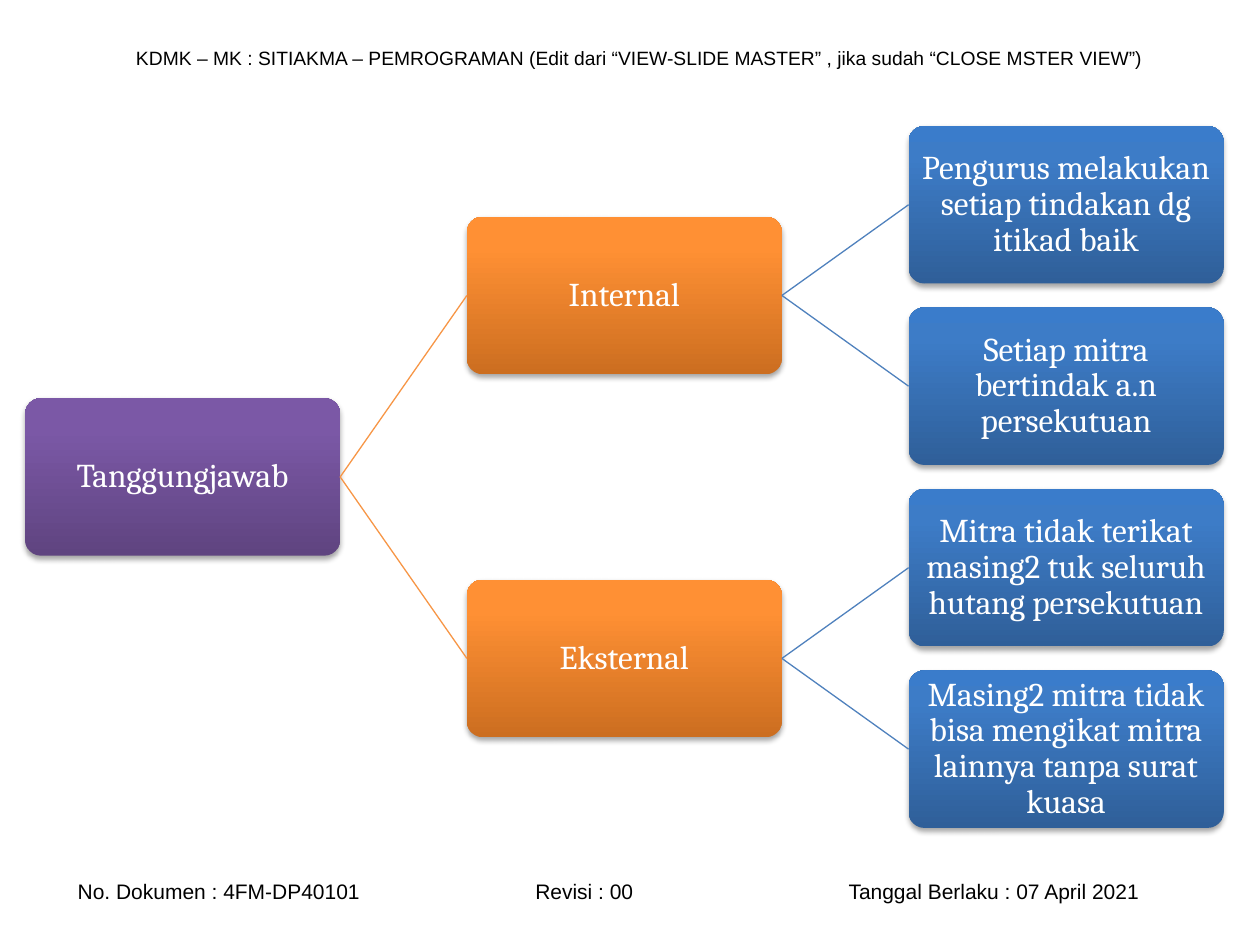
from lxml import etree
from pptx import Presentation
from pptx import oxml
from pptx.dml.color import RGBColor
from pptx.enum import shapes, text
from pptx.oxml import ns
from pptx.util import Pt

BOX_WIDTH, BOX_HEIGHT = 180, 90
COLUMN_PITCH, ROW_PITCH = 252.4, 103.7
LEVELS = [
    {"stops": ["5F4480", "7B58A6", "7C57A8"], "line": None},
    {"stops": ["CC6E20", "FF9034", "FF9136"], "line": "F79646"},
    {"stops": ["2F5F99", "3D7CC7", "3A7CCB"], "line": "4F81BD"},
]
TREE = ("Tanggungjawab", [
    ("Internal", [
        ("Pengurus melakukan setiap tindakan dg itikad baik", []),
        ("Setiap mitra bertindak a.n persekutuan", []),
    ]),
    ("Eksternal", [
        ("Mitra tidak terikat masing2 tuk seluruh hutang persekutuan", []),
        ("Masing2 mitra tidak bisa mengikat mitra lainnya tanpa surat kuasa", []),
    ]),
])


def color(value):
    """Turn a hex string into a colour."""
    return RGBColor.from_string(value)


def apply(target, values):
    """Set each attribute named in a dict."""
    for name, value in values.items():
        setattr(target, name, value)


def write(shape, words, size, font, ink, frame_values, para_values):
    """Write one formatted paragraph into a shape."""
    frame = shape.text_frame
    apply(frame, {"word_wrap": True, "vertical_anchor": text.MSO_ANCHOR.MIDDLE, **frame_values})
    para = frame.paragraphs[0]
    apply(para, para_values)
    span = para.add_run()
    span.text = words
    apply(span.font, {"size": Pt(size), "name": font})
    span.font.color.rgb = color(ink)
    return para


def add_line_of_text(page, box, words, size, inset=7.2, tabs=()):
    """Place a header or footer line with optional tab stops."""
    shape = page.shapes.add_textbox(*map(Pt, box))
    para = write(shape, words, size, "Arial", "000000",
                 {"margin_left": Pt(inset)}, {"alignment": text.PP_ALIGN.LEFT})
    if tabs:
        stops = etree.SubElement(para._p.get_or_add_pPr(), ns.qn("a:tabLst"))
        for position in tabs:
            etree.SubElement(stops, ns.qn("a:tab"), pos=str(Pt(position)), algn="l")


def paint(shape, stops):
    """Give a shape a vertical gradient and a soft shadow."""
    shape.line.fill.background()
    marks = "".join(f'<a:gs pos="{place}"><a:srgbClr val="{value}"/></a:gs>'
                    for place, value in zip((0, 80000, 100000), stops))
    gradient = oxml.parse_xml(f'<a:gradFill {ns.nsdecls("a")} rotWithShape="1"><a:gsLst>{marks}</a:gsLst>'
                              '<a:lin ang="16200000" scaled="0"/></a:gradFill>')
    properties = shape._element.spPr
    properties.find(ns.qn("a:prstGeom")).addnext(gradient)
    shape.shadow.inherit = False
    properties.find(ns.qn("a:effectLst")).append(oxml.parse_xml(
        f'<a:outerShdw {ns.nsdecls("a")} blurRad="{Pt(3.1)}" dist="{Pt(1.8)}" dir="5400000" rotWithShape="0">'
        '<a:srgbClr val="000000"><a:alpha val="35000"/></a:srgbClr></a:outerShdw>'))


def add_node(page, left, top, words, level):
    """Place one rounded box of the tree."""
    shape = page.shapes.add_shape(shapes.MSO_SHAPE.ROUNDED_RECTANGLE,
                                  *map(Pt, (left, top, BOX_WIDTH, BOX_HEIGHT)))
    shape.adjustments[0] = 0.1
    paint(shape, LEVELS[level]["stops"])
    margins = {f"margin_{side}": Pt(0.95) for side in ("left", "top", "right", "bottom")}
    write(shape, words, 19, "Cambria", "FFFFFF", margins,
          {"alignment": text.PP_ALIGN.CENTER, "line_spacing": 0.9})
    return shape


def join(page, parent, child, ink):
    """Connect a parent's right side to a child's left side."""
    link = page.shapes.add_connector(shapes.MSO_CONNECTOR.STRAIGHT, 0, 0, 0, 0)
    link.begin_connect(parent, 3)
    link.end_connect(child, 1)
    link.line.width = Pt(0.75)
    link.line.color.rgb = color(ink)
    etree.SubElement(link._element.spPr, ns.qn("a:effectLst"))


def count_leaves(node):
    """Count the rows a branch takes up."""
    return sum(map(count_leaves, node[1])) or 1


def add_tree(page, left, top, node, level=0):
    """Place a branch with its root centred on its rows."""
    words, children = node
    middle = top + (count_leaves(node) - 1) * ROW_PITCH / 2
    root = add_node(page, left, middle, words, level)
    for child in children:
        branch = add_tree(page, left + COLUMN_PITCH, top, child, level + 1)
        join(page, root, branch, LEVELS[level + 1]["line"])
        top += count_leaves(child) * ROW_PITCH
    return root


def main():
    """Build the slide and save it."""
    deck = Presentation()
    apply(deck, {"slide_width": Pt(720), "slide_height": Pt(540)})
    page = deck.slides.add_slide(deck.slide_layouts[6])
    add_line_of_text(page, (70.6, 22.3, 601.2, 20.9),
                     "KDMK – MK : SITIAKMA – PEMROGRAMAN (Edit dari “VIEW-SLIDE MASTER” , "
                     "jika sudah “CLOSE MSTER VIEW”)", 11)
    add_line_of_text(page, (14.4, 498.2, 680.4, 21.6),
                     "No. Dokumen : 4FM-DP40101\tRevisi : 00\tTanggal Berlaku : 07 April 2021",
                     12, inset=30, tabs=(261.5, 440.5))
    add_tree(page, 14.4, 72, TREE)
    deck.save("out.pptx")


if __name__ == "__main__":
    main()
